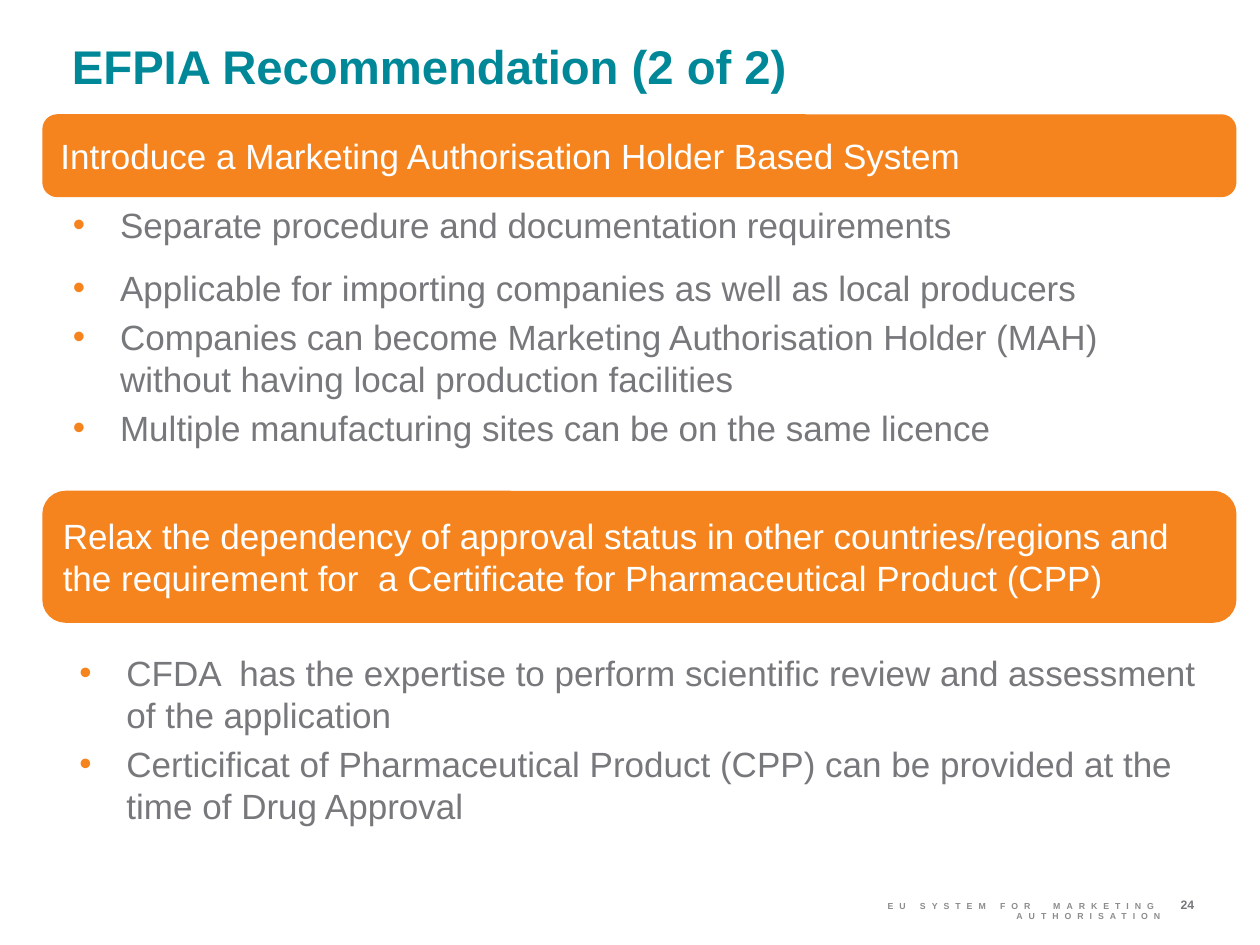
from lxml import etree
from pptx import Presentation
from pptx import util as u
from pptx.dml.color import RGBColor
from pptx.enum import shapes, text
from pptx.oxml.ns import qn

# Content
TITLE = "EFPIA Recommendation (2 of 2)"
BANNERS = [
    # text, top and height in cm
    ("Introduce a Marketing Authorisation Holder Based System", 2.34, 1.6),
    ("Relax the dependency of approval status in other countries/regions and "
     "the requirement for  a Certificate for Pharmaceutical Product (CPP)", 9.93, 2.59),
]
MAH_POINTS = [
    # text, space before in points
    ("Separate procedure and documentation requirements", 0),
    ("Applicable for importing companies as well as local producers", 11.8),
    ("Companies can become Marketing Authorisation Holder (MAH) "
     "without having local production facilities", 4),
    ("Multiple manufacturing sites can be on the same licence", 4),
]
CPP_POINTS = [
    ("CFDA  has the expertise to perform scientific review and assessment "
     "of the application", 0),
    ("Certicificat of Pharmaceutical Product (CPP) can be provided at the "
     "time of Drug Approval", 4),
]
FOOTER = "EU SYSTEM FOR  MARKETING AUTHORISATION"
PAGE_NUMBER = "24"

THEME = {
    "font": "Arial",
    "teal": "008898", "orange": "F5841F", "grey": "77787B",
    "light_grey": "8C8C8C", "white": "FFFFFF",
    "title": 27, "body": 20, "footer": 5, "number": 7,
}
INDENT = u.Cm(0.95)


def place(shape, left, top, width, height):
    shape.left, shape.top = u.Cm(left), u.Cm(top)
    shape.width, shape.height = u.Cm(width), u.Cm(height)


def prepare_frame(frame, margin=0, anchor=text.MSO_ANCHOR.TOP):
    frame.word_wrap = True
    frame.auto_size = text.MSO_AUTO_SIZE.NONE
    frame.vertical_anchor = anchor
    frame.margin_left = frame.margin_right = u.Cm(margin)
    frame.margin_top = frame.margin_bottom = u.Cm(margin / 2)


def format_runs(paragraph, size, color, bold=False, align=text.PP_ALIGN.LEFT):
    paragraph.alignment = align
    for run in paragraph.runs:
        run.font.name = THEME["font"]
        run.font.size = u.Pt(THEME[size])
        run.font.bold = bold
        run.font.color.rgb = RGBColor.from_string(THEME[color])


def add_bullet(paragraph):
    properties = paragraph._p.get_or_add_pPr()
    properties.set("marL", str(INDENT))
    properties.set("indent", str(-INDENT))
    color = etree.SubElement(properties, qn("a:buClr"))
    etree.SubElement(color, qn("a:srgbClr"), val=THEME["orange"])
    etree.SubElement(properties, qn("a:buFont"), typeface=THEME["font"])
    etree.SubElement(properties, qn("a:buChar"), char="•")


def fill_list(shape, points):
    frame = shape.text_frame
    prepare_frame(frame)
    frame.text = "\n".join(point for point, _ in points)
    for paragraph, (_, space) in zip(frame.paragraphs, points):
        add_bullet(paragraph)
        paragraph.space_before = u.Pt(space)
        format_runs(paragraph, "body", "grey")


def add_banner(slide, label, top, height):
    banner = slide.shapes.add_shape(shapes.MSO_SHAPE.ROUNDED_RECTANGLE, 0, 0, 0, 0)
    place(banner, 0.89, top, 24, height)
    banner.shadow.inherit = False
    orange = RGBColor.from_string(THEME["orange"])
    banner.fill.solid()
    banner.fill.fore_color.rgb = orange
    banner.line.color.rgb = orange
    banner.line.width = u.Pt(2)
    prepare_frame(banner.text_frame, 0.25, text.MSO_ANCHOR.MIDDLE)
    banner.text_frame.text = label
    format_runs(banner.text_frame.paragraphs[0], "body", "white")


def add_label(slide, label, box, size, color, align):
    shape = slide.shapes.add_textbox(0, 0, 0, 0)
    place(shape, *box)
    prepare_frame(shape.text_frame)
    shape.text_frame.text = label
    paragraph = shape.text_frame.paragraphs[0]
    format_runs(paragraph, size, color, True, align)
    return paragraph


def main():
    presentation = Presentation()
    presentation.slide_width, presentation.slide_height = u.Cm(25.4), u.Cm(19.05)
    slide = presentation.slides.add_slide(presentation.slide_layouts[1])

    # Title
    title = slide.shapes.title
    place(title, 1.45, 0.75, 22.6, 1.6)
    prepare_frame(title.text_frame)
    title.text_frame.text = TITLE
    format_runs(title.text_frame.paragraphs[0], "title", "teal", True)

    # Banners
    for label, top, height in BANNERS:
        add_banner(slide, label, top, height)

    # Bullet lists
    body = slide.placeholders[1]
    place(body, 1.47, 4.11, 22.86, 5.8)
    fill_list(body, MAH_POINTS)
    details = slide.shapes.add_textbox(0, 0, 0, 0)
    place(details, 1.6, 13.13, 22.86, 3.96)
    fill_list(details, CPP_POINTS)

    # Footer and page number
    footer = add_label(slide, FOOTER, (15.6, 18.16, 7.8, 0.41),
                       "footer", "light_grey", text.PP_ALIGN.RIGHT)
    footer.runs[0]._r.get_or_add_rPr().set("spc", "340")
    add_label(slide, PAGE_NUMBER, (23.8, 18.08, 1.09, 0.43),
              "number", "grey", text.PP_ALIGN.LEFT)

    presentation.save("out.pptx")


if __name__ == "__main__":
    main()
